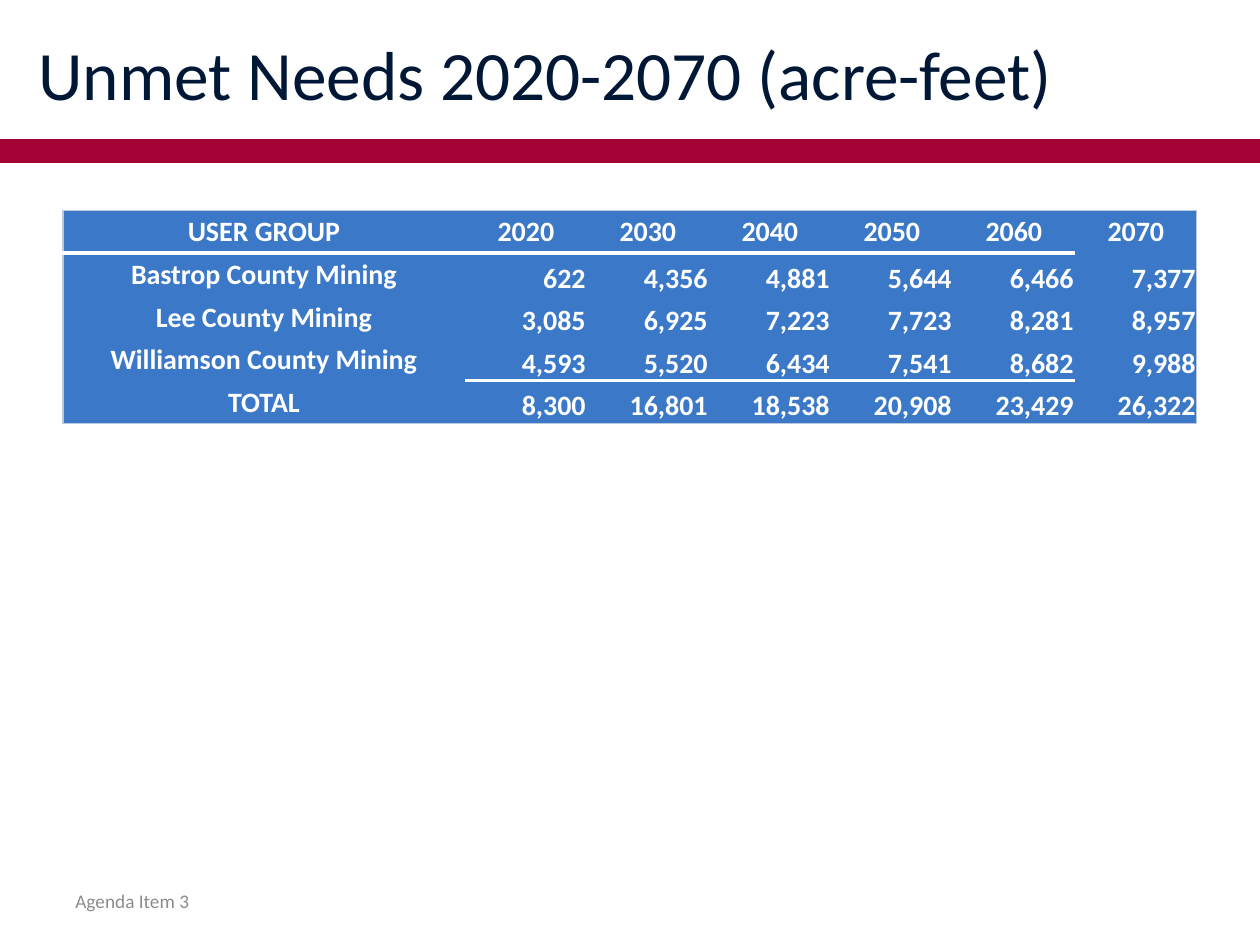
import pptx
import pptx.dml.color
import pptx.enum.shapes
import pptx.enum.text
import pptx.oxml
import pptx.oxml.ns
import pptx.util
from dataclasses import dataclass
from lxml import etree

ALIGN = pptx.enum.text.PP_ALIGN
ANCHOR = pptx.enum.text.MSO_ANCHOR
GRID = pptx.util.Inches(0.1)


@dataclass(frozen=True)
class Theme:
    font: str = "Calibri"
    title: str = "001836"
    rule: str = "A40234"
    footer: str = "8C8C8C"
    cell: str = "3B79C8"
    cell_text: str = "FFFFFF"
    frame: str = "BDC8DD"
    title_size: float = 39.6
    table_size: float = 16
    footer_size: float = 11
    rule_width: float = 14
    frame_width: float = 0.75
    header_width: float = 3
    total_width: float = 2


THEME = Theme()

ROWS = [
    ["USER GROUP", "2020", "2030", "2040", "2050", "2060", "2070"],
    ["Bastrop County Mining", "622", "4,356", "4,881", "5,644", "6,466", "7,377"],
    ["Lee County Mining", "3,085", "6,925", "7,223", "7,723", "8,281", "8,957"],
    ["Williamson County Mining", "4,593", "5,520", "6,434", "7,541", "8,682", "9,988"],
    ["TOTAL", "8,300", "16,801", "18,538", "20,908", "23,429", "26,322"],
]


def units(*values):
    return [round(v * GRID) for v in values]


def rgb(color):
    return pptx.dml.color.RGBColor.from_string(color)


def write(tf, text, size, color, align, anchor, bold=False):
    tf.text = text
    tf.word_wrap = True
    tf.vertical_anchor = anchor
    p = tf.paragraphs[0]
    p.alignment = align
    font = p.runs[0].font
    font.name, font.size, font.bold = THEME.font, pptx.util.Pt(size), bold
    font.color.rgb = rgb(color)


def add_title(s, box, text):
    sp = s.shapes.title
    sp.left, sp.top, sp.width, sp.height = units(*box)
    write(sp.text_frame, text, THEME.title_size, THEME.title, ALIGN.CENTER, ANCHOR.MIDDLE)
    sp.text_frame.auto_size = pptx.enum.text.MSO_AUTO_SIZE.NONE


def add_rule(s, box):
    left, top, width, height = units(*box)
    line = s.shapes.add_connector(
        pptx.enum.shapes.MSO_CONNECTOR.STRAIGHT, left, top, left + width, top + height)
    line.line.color.rgb = rgb(THEME.rule)
    line.line.width = pptx.util.Pt(THEME.rule_width)
    etree.SubElement(line._element.spPr, pptx.oxml.ns.qn("a:effectLst"))


def add_footer(s, box, text):
    sp = s.shapes.add_textbox(*units(*box))
    write(sp.text_frame, text, THEME.footer_size, THEME.footer, ALIGN.LEFT, ANCHOR.MIDDLE)


def cell_borders(row, col, last_row, last_col):
    frame = (THEME.frame, THEME.frame_width)
    header = (THEME.cell_text, THEME.header_width) if col < last_col else None
    total = (THEME.cell_text, THEME.total_width) if 0 < col < last_col else None
    edges = {0: frame, 1: header, last_row: total, last_row + 1: frame}
    return {
        "L": frame if col == 0 else None,
        "R": frame if col == last_col else None,
        "T": edges.get(row),
        "B": edges.get(row + 1),
    }


def set_borders(cell, borders):
    tc_pr = cell._tc.get_or_add_tcPr()
    for side, border in borders.items():
        ln = etree.SubElement(tc_pr, pptx.oxml.ns.qn(f"a:ln{side}"))
        if border is None:
            etree.SubElement(ln, pptx.oxml.ns.qn("a:noFill"))
            continue
        color, width = border
        ln.set("w", str(pptx.util.Pt(width)))
        fill = etree.SubElement(ln, pptx.oxml.ns.qn("a:solidFill"))
        etree.SubElement(fill, pptx.oxml.ns.qn("a:srgbClr")).set("val", color)


def add_needs_table(s, box, rows, name_width):
    n_rows, n_cols = len(rows), len(rows[0])
    table = s.shapes.add_table(n_rows, n_cols, *units(*box)).table
    table.first_row = table.horz_banding = False
    year_width = (box[2] - name_width) / (n_cols - 1)
    for i, column in enumerate(table.columns):
        column.width = units(year_width if i else name_width)[0]
    for r, values in enumerate(rows):
        table.rows[r].height = units(box[3] / n_rows)[0]
        for c, value in enumerate(values):
            cell = table.cell(r, c)
            number = r > 0 and c > 0
            anchor = ANCHOR.BOTTOM if number else ANCHOR.MIDDLE
            write(cell.text_frame, value, THEME.table_size, THEME.cell_text,
                  ALIGN.RIGHT if number else ALIGN.CENTER, anchor, bold=True)
            cell.vertical_anchor = anchor
            cell.margin_left = cell.margin_right = cell.margin_top = pptx.util.Inches(0.01)
            cell.margin_bottom = 0
            set_borders(cell, cell_borders(r, c, n_rows - 1, n_cols - 1))
            cell.fill.solid()
            cell.fill.fore_color.rgb = rgb(THEME.cell)


def main():
    prs = pptx.Presentation()
    prs.slide_width, prs.slide_height = units(100, 75)
    s = prs.slides.add_slide(prs.slide_layouts[5])
    add_rule(s, (0, 12, 100, 0))
    add_title(s, (0.8, 0.8, 85, 10), "Unmet Needs 2020-2070 (acre-feet)")
    add_footer(s, (5, 69.5, 23.3, 4), "Agenda Item 3")
    add_needs_table(s, (5, 16.7, 90, 16.9), ROWS, name_width=31.9)
    prs.save("out.pptx")


if __name__ == "__main__":
    main()
